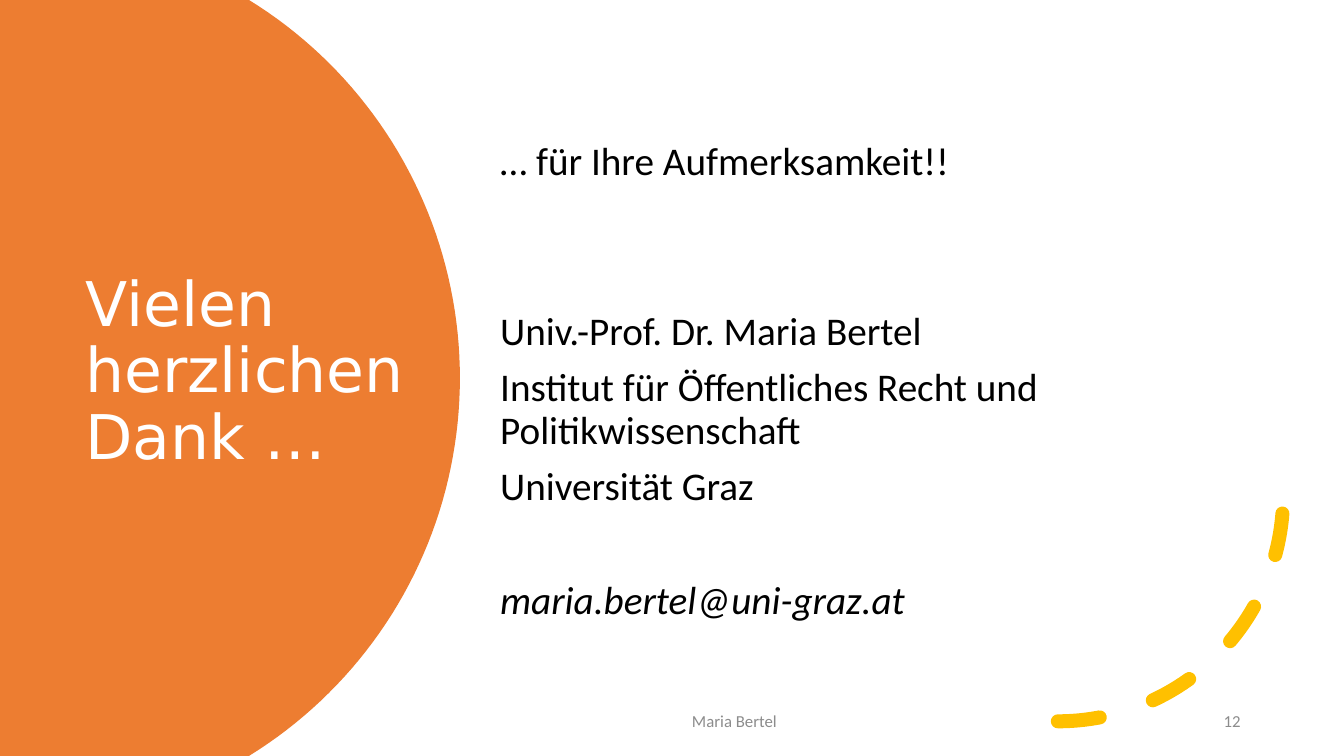
import math
from dataclasses import dataclass

from lxml import etree
from pptx import Presentation
from pptx import util as u
from pptx.dml.color import RGBColor
from pptx.enum import dml, shapes, text
from pptx.oxml.ns import qn

PX = 9525  # EMU per px, 96 px to the inch


@dataclass(frozen=True)
class Theme:
    orange: RGBColor = RGBColor(0xED, 0x7D, 0x31)
    yellow: RGBColor = RGBColor(0xFF, 0xC0, 0x00)
    white: RGBColor = RGBColor(0xFF, 0xFF, 0xFF)
    black: RGBColor = RGBColor(0x00, 0x00, 0x00)
    grey: RGBColor = RGBColor(0x8C, 0x8C, 0x8C)
    title_font: str = "DejaVu Sans"
    body_font: str = "Calibri"
    title_size: int = 44
    body_size: int = 28
    footer_size: int = 12


theme = Theme()


def add_box(left, top, width, height):
    box = page.shapes.add_textbox(left * PX, top * PX, width * PX, height * PX)
    box.text_frame.word_wrap = True
    box.text_frame.vertical_anchor = text.MSO_ANCHOR.MIDDLE
    return box.text_frame


def style(para, font, size, color):
    para.font.name = font
    para.font.size = u.Pt(size)
    para.font.color.rgb = color


deck = Presentation()
deck.slide_width = 1280 * PX
deck.slide_height = 720 * PX
page = deck.slides.add_slide(deck.slide_layouts[6])

# Orange disc, cut off by the slide edges
center_x, center_y, radius, steps = 15, 360, 423, 80
half_angle = math.asin(center_y / radius)
angles = [half_angle * (2 * step / steps - 1) for step in range(steps + 1)]
rim = [
    (round((center_x + radius * math.cos(angle)) * PX),
     round((center_y + radius * math.sin(angle)) * PX))
    for angle in angles
]
builder = page.shapes.build_freeform(0, 0)
builder.add_line_segments(rim + [(0, 720 * PX)], close=True)
disc = builder.convert_to_shape()
disc.shadow.inherit = False
disc.fill.solid()
disc.fill.fore_color.rgb = theme.orange
disc.line.fill.background()

# Title
para = add_box(72, 121, 336, 468).paragraphs[0]
para.text = "Vielen herzlichen Dank …"
para.line_spacing = 0.9
style(para, theme.title_font, theme.title_size, theme.white)

# Dashed arc, mirrored so that it starts at the bottom
arc = page.shapes.add_shape(
    shapes.MSO_SHAPE.ARC, 793 * PX, 258 * PX, 429 * PX, 429 * PX)
arc.shadow.inherit = False
arc.fill.background()
arc.line.color.rgb = theme.yellow
arc.line.width = u.Pt(10)
arc.line.dash_style = dml.MSO_LINE.DASH
outline = arc.line._get_or_add_ln()
outline.set("cap", "rnd")
etree.SubElement(outline, qn("a:round"))
arc._element.spPr.find(qn("a:xfrm")).set("flipV", "1")

# Thanks and contact: text, space before in points, italic
contact = [
    ("… für Ihre Aufmerksamkeit!!", 0, False),
    ("Univ.-Prof. Dr. Maria Bertel", 91, False),
    ("Institut für Öffentliches Recht und Politikwissenschaft", 10, False),
    ("Universität Graz", 10, False),
    ("maria.bertel@uni-graz.at", 51, True),
]
frame = add_box(467, 62, 725, 587)
frame.margin_top = 22 * PX
for index, (words, space, italic) in enumerate(contact):
    para = frame.add_paragraph() if index else frame.paragraphs[0]
    para.text = words
    para.line_spacing = 0.9
    para.space_before = u.Pt(space)
    style(para, theme.body_font, theme.body_size, theme.black)
    para.font.italic = italic

# Footer and page number
footers = [
    ("Maria Bertel", 424, 551, text.PP_ALIGN.CENTER),
    ("12", 1001, 190, text.PP_ALIGN.RIGHT),
]
for words, left, width, alignment in footers:
    para = add_box(left, 667, width, 38).paragraphs[0]
    para.text = words
    para.alignment = alignment
    style(para, theme.body_font, theme.footer_size, theme.grey)

deck.save("out.pptx")
